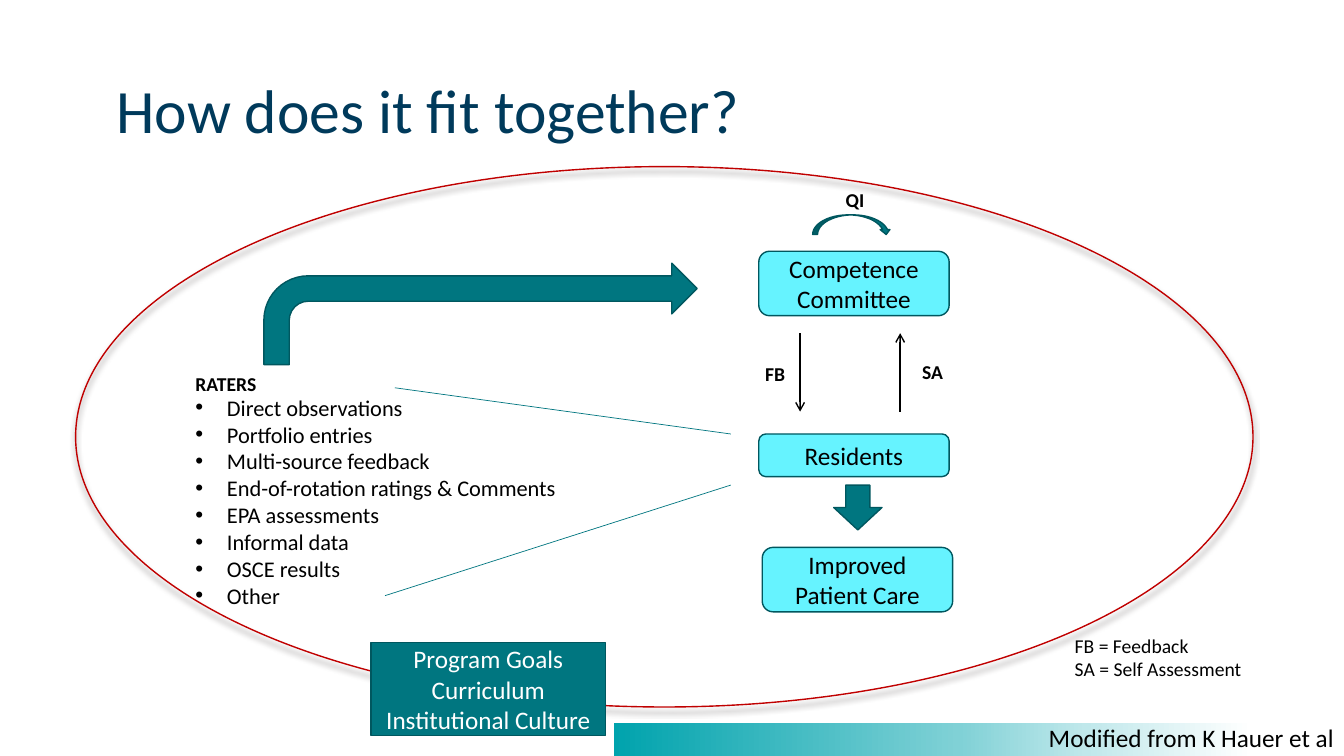
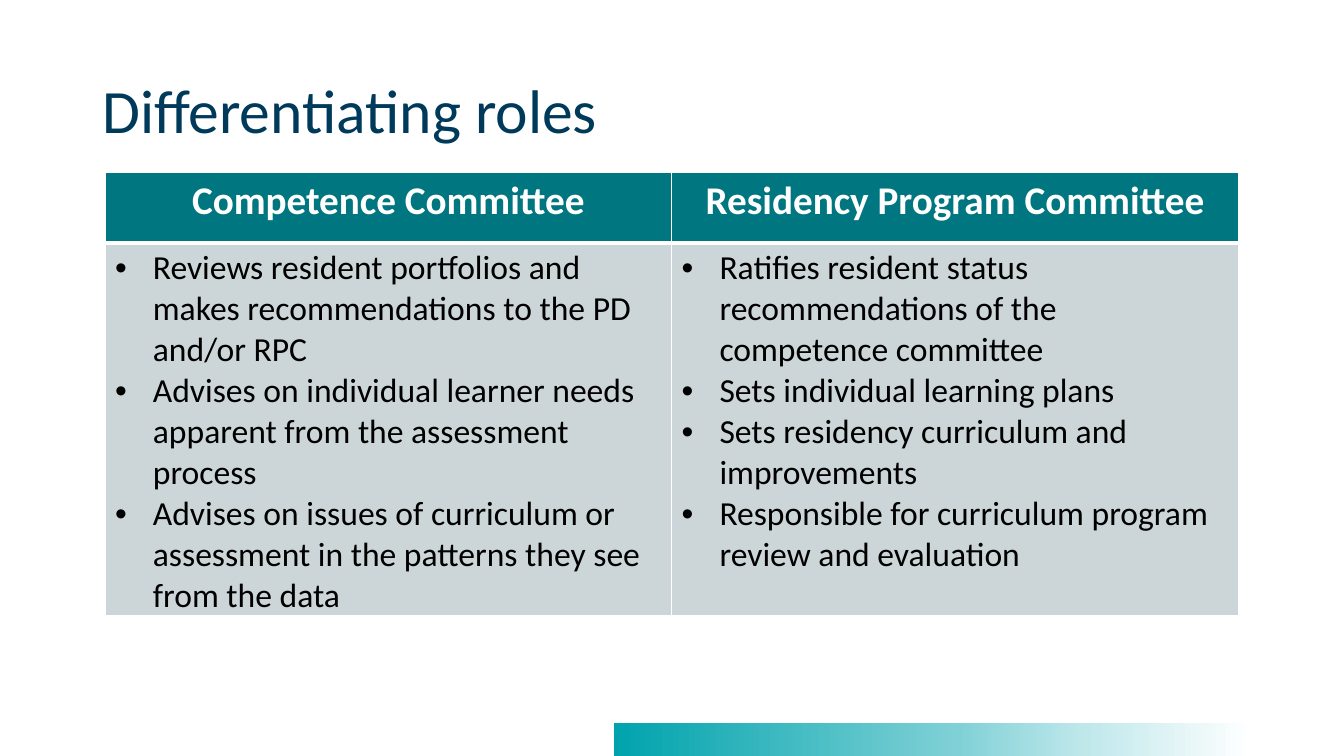
from dataclasses import dataclass
from typing import NamedTuple, Optional

from pptx import Presentation
from pptx.dml.color import RGBColor
from pptx.enum.shapes import MSO_CONNECTOR, MSO_SHAPE
from pptx.enum.text import MSO_ANCHOR, MSO_AUTO_SIZE, PP_ALIGN
from pptx.oxml.ns import qn
from pptx.util import Pt
from lxml.etree import SubElement


@dataclass(frozen=True)
class Theme:
    font: str = "Calibri"
    ink: str = "000000"
    white: str = "FFFFFF"
    title: str = "003A5B"
    teal: str = "007680"
    outline: str = "00575F"
    cyan: str = "66F3FF"
    red: str = "C00000"
    shadow: str = "767171"
    cell: str = "CCD6D8"
    band: tuple = ((0, "00A3AD"), (54, "80D1D6"), (74, "C0E8EB"), (100, "FFFFFF"))
    title_size: float = 44
    header_size: float = 28
    cell_size: float = 24
    body_size: float = 18
    list_size: float = 16
    label_size: float = 14


THEME = Theme()


class Frame(NamedTuple):
    left: float
    top: float
    width: float
    height: float


class Style(NamedTuple):
    size: float
    color: str = THEME.ink
    bold: bool = False
    align: PP_ALIGN = PP_ALIGN.LEFT
    bullet_indent: float = 0


class Label(NamedTuple):
    frame: Frame
    lines: tuple
    style: Style


class Block(NamedTuple):
    kind: MSO_SHAPE
    frame: Frame
    fill: Optional[str] = THEME.teal
    line: str = THEME.outline
    text: str = ""
    text_color: str = THEME.ink


class Link(NamedTuple):
    start: tuple
    end: tuple
    color: str
    width: float
    arrow: bool = False


BOLD_LABEL = Style(THEME.label_size, bold=True)
LIST_STYLE = Style(THEME.list_size, bullet_indent=22.5)
HEADER_STYLE = Style(THEME.header_size, THEME.white, True, PP_ALIGN.CENTER)
CELL_STYLE = Style(THEME.cell_size, bullet_indent=27)

STAGE_LEFT, STAGE_WIDTH = 542, 136
RATERS_LEFT = 130

ELLIPSE = Block(MSO_SHAPE.OVAL, Frame(54, 119, 841, 386), None, THEME.red)

LABELS = (
    Label(Frame(RATERS_LEFT, 260.5, 65, 26.5), ("RATERS",), BOLD_LABEL),
    Label(
        Frame(RATERS_LEFT, 276.5, 289.5, 165),
        (
            "Direct observations",
            "Portfolio entries",
            "Multi-source feedback",
            "End-of-rotation ratings & Comments",
            "EPA assessments",
            "Informal data",
            "OSCE results",
            "Other",
        ),
        LIST_STYLE,
    ),
    Label(Frame(537, 254, 34, 26.5), ("FB",), BOLD_LABEL),
    Label(Frame(649, 252, 34.5, 26.5), ("SA",), BOLD_LABEL),
    Label(Frame(594.5, 129.5, 33, 26.5), ("QI",), BOLD_LABEL),
    Label(
        Frame(758, 448, 140.5, 44),
        ("FB = Feedback", "SA = Self Assessment"),
        Style(THEME.label_size),
    ),
)

SOURCE_NOTE = Label(
    Frame(739.5, 511, 225.5, 32),
    ("Modified from K Hauer et al",),
    Style(THEME.body_size),
)

BLOCKS = (
    Block(MSO_SHAPE.ROUNDED_RECTANGLE, Frame(STAGE_LEFT, 179.5, STAGE_WIDTH, 46),
          THEME.cyan, text="Competence Committee"),
    Block(MSO_SHAPE.ROUNDED_RECTANGLE, Frame(STAGE_LEFT, 310, STAGE_WIDTH, 30.5),
          THEME.cyan, text="Residents"),
    Block(MSO_SHAPE.ROUNDED_RECTANGLE, Frame(STAGE_LEFT + 2.5, 391, STAGE_WIDTH, 46),
          THEME.cyan, text="Improved Patient Care"),
    Block(MSO_SHAPE.DOWN_ARROW, Frame(595.5, 346.5, 34.5, 32)),
    Block(MSO_SHAPE.CURVED_DOWN_ARROW, Frame(580.5, 153.5, 56, 14)),
    Block(MSO_SHAPE.BENT_ARROW, Frame(188.5, 188, 309.5, 72.5)),
    Block(MSO_SHAPE.RECTANGLE, Frame(265, 459, 167.5, 66.5),
          text="Program Goals Curriculum Institutional Culture",
          text_color=THEME.white),
)

LINKS = (
    Link((571.5, 238), (571.5, 294), THEME.ink, 1, True),
    Link((643, 294), (643, 238), THEME.ink, 1, True),
    Link((282, 277), (522, 310), THEME.teal, 0.5),
    Link((275, 425.5), (522, 346.5), THEME.teal, 0.5),
)

ROLES = {
    "Competence Committee": (
        "Reviews resident portfolios and makes recommendations to the PD and/or RPC",
        "Advises on individual learner needs apparent from the assessment process",
        "Advises on issues of curriculum or assessment in the patterns they see from the data",
    ),
    "Residency Program Committee": (
        "Ratifies resident status recommendations of the competence committee",
        "Sets individual learning plans",
        "Sets residency curriculum and improvements",
        "Responsible for curriculum program review and evaluation",
    ),
}


def color_of(value: str) -> RGBColor:
    return RGBColor.from_string(value)


def in_points(values) -> list:
    return [Pt(value) for value in values]


def write_lines(text_frame, lines: tuple, style: Style) -> None:
    for index, line in enumerate(lines):
        para = text_frame.add_paragraph() if index else text_frame.paragraphs[0]
        para.alignment = style.align
        if style.bullet_indent:
            properties = para._p.get_or_add_pPr()
            properties.set("marL", str(Pt(style.bullet_indent)))
            properties.set("indent", str(-Pt(style.bullet_indent)))
            SubElement(properties, qn("a:buFont"), typeface="Arial")
            SubElement(properties, qn("a:buChar"), char="•")
        span = para.add_run()
        span.text = line
        span.font.name = THEME.font
        span.font.size = Pt(style.size)
        span.font.bold = style.bold
        span.font.color.rgb = color_of(style.color)


def set_insets(text_frame, side: float, edge: float) -> None:
    text_frame.margin_left = text_frame.margin_right = Pt(side)
    text_frame.margin_top = text_frame.margin_bottom = Pt(edge)


def add_label(page, label: Label) -> None:
    box = page.shapes.add_textbox(*in_points(label.frame))
    box.text_frame.word_wrap = False
    box.text_frame.auto_size = MSO_AUTO_SIZE.SHAPE_TO_FIT_TEXT
    set_insets(box.text_frame, 9.6, 4.8)
    write_lines(box.text_frame, label.lines, label.style)


def add_block(page, block: Block):
    shape = page.shapes.add_shape(block.kind, *in_points(block.frame))
    shape.shadow.inherit = False
    if block.fill:
        shape.fill.solid()
        shape.fill.fore_color.rgb = color_of(block.fill)
    else:
        shape.fill.background()
    shape.line.color.rgb = color_of(block.line)
    shape.line.width = Pt(1)
    if block.text:
        shape.text_frame.word_wrap = True
        shape.text_frame.vertical_anchor = MSO_ANCHOR.MIDDLE
        set_insets(shape.text_frame, 9.6, 4.8)
        style = Style(THEME.body_size, block.text_color, align=PP_ALIGN.CENTER)
        write_lines(shape.text_frame, (block.text,), style)
    return shape


def add_drop_shadow(shape) -> None:
    effects = shape._element.spPr.find(qn("a:effectLst"))
    shadow = SubElement(effects, qn("a:outerShdw"), blurRad=str(Pt(4)),
                        dist=str(Pt(4)), dir="5400000", rotWithShape="0")
    SubElement(shadow, qn("a:srgbClr"), val=THEME.shadow)


def add_link(page, link: Link) -> None:
    connector = page.shapes.add_connector(
        MSO_CONNECTOR.STRAIGHT, *in_points(link.start + link.end))
    connector.line.color.rgb = color_of(link.color)
    connector.line.width = Pt(link.width)
    properties = connector._element.spPr
    if link.arrow:
        SubElement(properties.find(qn("a:ln")), qn("a:tailEnd"), type="arrow")
    SubElement(properties, qn("a:effectLst"))


def add_band(page) -> None:
    band = page.shapes.add_shape(
        MSO_SHAPE.RECTANGLE, *in_points(Frame(438.5, 516.5, 456, 23.5)))
    band.shadow.inherit = False
    band.line.fill.background()
    band.fill.gradient()
    band.fill.gradient_angle = 0
    stops = band._element.spPr.find(".//" + qn("a:gsLst"))
    stops.clear()
    for percent, color in THEME.band:
        stop = SubElement(stops, qn("a:gs"), pos=str(percent * 1000))
        SubElement(stop, qn("a:srgbClr"), val=color)


def add_page(deck, title: str, indent: float = 0):
    page = deck.slides.add_slide(deck.slide_layouts[6])
    add_band(page)
    box = page.shapes.add_textbox(*in_points(Frame(66, 29, 828, 104)))
    box.text_frame.word_wrap = True
    box.text_frame.vertical_anchor = MSO_ANCHOR.MIDDLE
    set_insets(box.text_frame, 7.2, 3.6)
    box.text_frame.margin_left = Pt(7.2 + indent)
    write_lines(box.text_frame, (title,), Style(THEME.title_size, THEME.title))
    box.text_frame.paragraphs[0].line_spacing = 0.9
    return page


def set_borders(cell, top: float, bottom: float) -> None:
    properties = cell._tc.get_or_add_tcPr()
    for side, width in (("L", 1), ("R", 1), ("T", top), ("B", bottom)):
        line = SubElement(properties, qn("a:ln" + side), w=str(Pt(width)))
        SubElement(SubElement(line, qn("a:solidFill")), qn("a:srgbClr"), val=THEME.white)


def fill_cell(cell, lines: tuple, style: Style, color: str, top: float, bottom: float) -> None:
    set_borders(cell, top, bottom)
    cell.fill.solid()
    cell.fill.fore_color.rgb = color_of(color)
    write_lines(cell.text_frame, lines, style)


def add_roles_table(page) -> None:
    heights = (50.5, 263)
    frame = Frame(75, 123, 809.5, sum(heights))
    table = page.shapes.add_table(len(heights), len(ROLES), *in_points(frame)).table
    table.horz_banding = False
    for row, height in zip(table.rows, heights):
        row.height = Pt(height)
    for index, (committee, duties) in enumerate(ROLES.items()):
        table.columns[index].width = Pt(frame.width / len(ROLES))
        fill_cell(table.cell(0, index), (committee,), HEADER_STYLE, THEME.teal, 1, 3)
        fill_cell(table.cell(1, index), duties, CELL_STYLE, THEME.cell, 3, 1)


def main() -> None:
    deck = Presentation()
    deck.slide_width, deck.slide_height = Pt(960), Pt(540)

    page = add_page(deck, "How does it fit together?", indent=10)
    add_drop_shadow(add_block(page, ELLIPSE))
    for label in LABELS:
        add_label(page, label)
    for link in LINKS:
        add_link(page, link)
    for block in BLOCKS:
        add_block(page, block)
    add_label(page, SOURCE_NOTE)

    add_roles_table(add_page(deck, "Differentiating roles"))
    deck.save("out.pptx")


if __name__ == "__main__":
    main()
